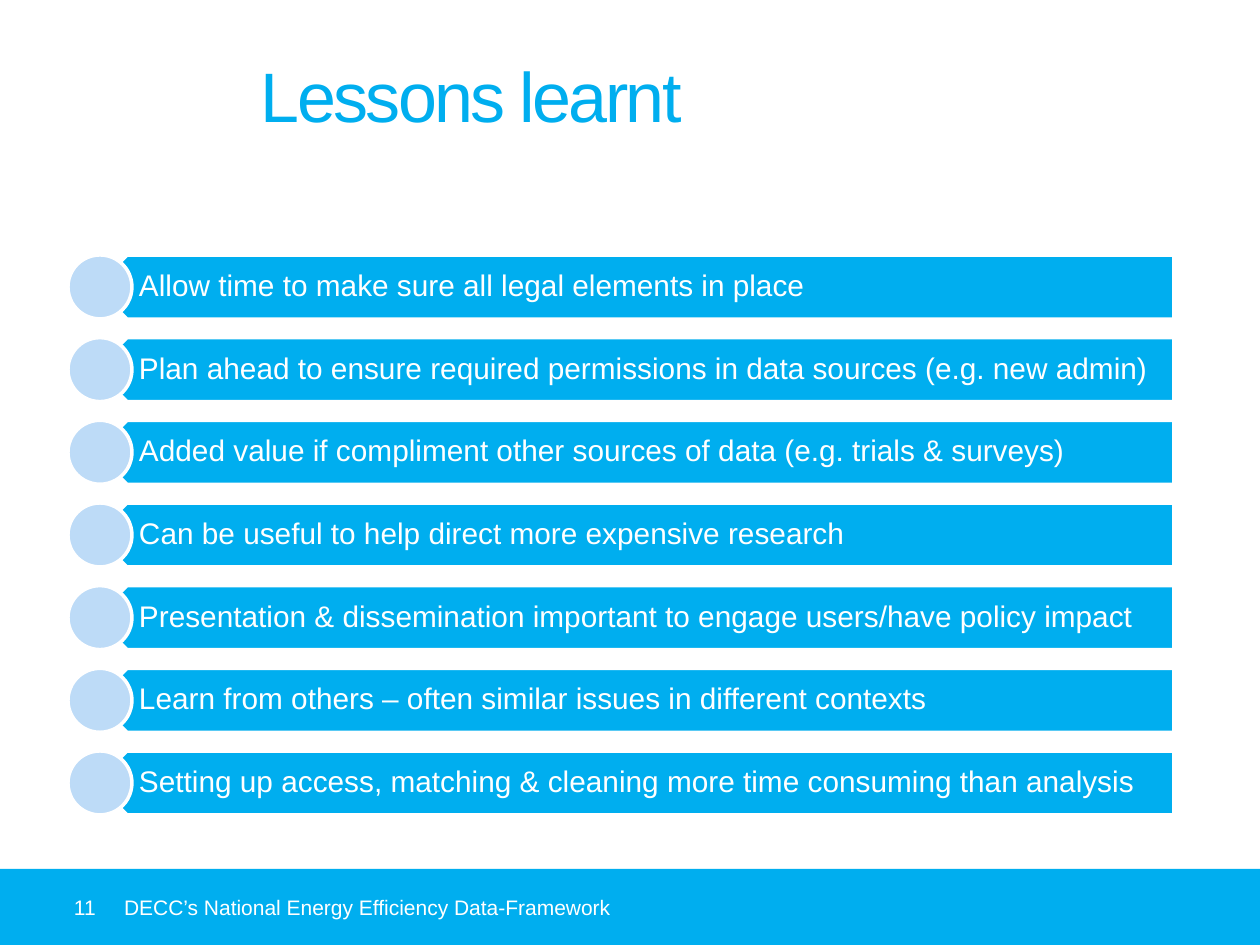
"""Build the "Lessons learnt" slide: seven bars with round markers above a footer band."""
from pptx import Presentation
from pptx.dml.color import RGBColor
from pptx.enum.shapes import MSO_SHAPE
from pptx.enum.text import MSO_ANCHOR, MSO_AUTO_SIZE, PP_ALIGN
from pptx.util import Pt

RECTANGLE, PENTAGON, OVAL = MSO_SHAPE.RECTANGLE, MSO_SHAPE.PENTAGON, MSO_SHAPE.OVAL
MIDDLE, BOTTOM = MSO_ANCHOR.MIDDLE, MSO_ANCHOR.BOTTOM
LEFT = PP_ALIGN.LEFT
NO_FIT = MSO_AUTO_SIZE.NONE

TITLE = "Lessons learnt"
LESSONS = [
    "Allow time to make sure all legal elements in place",
    "Plan ahead to ensure required permissions in data sources (e.g. new admin)",
    "Added value if compliment other sources of data (e.g. trials & surveys)",
    "Can be useful to help direct more expensive research",
    "Presentation & dissemination important to engage users/have policy impact",
    "Learn from others – often similar issues in different contexts",
    "Setting up access, matching & cleaning more time consuming than analysis",
]
PAGE_NUMBER = "11"
FOOTER = "DECC’s National Energy Efficiency Data-Framework"

COLOURS = {"blue": "00AEEF", "pale": "BDDBF7", "white": "FFFFFF"}
FONT = "Arial"
EMU_PER_PX = 914400 / 126
FIRST_TOP, LAST_TOP, BAR_HEIGHT = 255, 751, 64
BAR_LEFT, BAR_WIDTH = 95, 1079
TEXT_LEFT, TEXT_WIDTH = 111, 1063
MARKER_LEFT = 68


def px(length):
    return round(length * EMU_PER_PX)


def colour(name):
    return RGBColor.from_string(COLOURS[name])


def place(area):
    return [px(length) for length in area]


def add_shape(page, kind, area, fill, outlined=True):
    shape = page.shapes.add_shape(kind, *place(area))
    shape.shadow.inherit = False
    shape.fill.solid()
    shape.fill.fore_color.rgb = colour(fill)
    if outlined:
        shape.line.color.rgb = colour("white")
        shape.line.width = Pt(2)
    else:
        shape.line.fill.background()
    return shape


def write(box, text, size, ink="white", insets=(0, 0, 0, 0), anchor=MIDDLE, spacing=1.0):
    frame = box.text_frame
    sides = ("margin_left", "margin_top", "margin_right", "margin_bottom")
    frame_format = dict(zip(sides, place(insets)), word_wrap=True,
                        auto_size=NO_FIT, vertical_anchor=anchor)
    for name, value in frame_format.items():
        setattr(frame, name, value)
    para = frame.paragraphs[0]
    para.alignment = LEFT
    para.line_spacing = spacing
    span = para.add_run()
    span.text = text
    for name, value in {"name": FONT, "size": Pt(size), "bold": False}.items():
        setattr(span.font, name, value)
    span.font.color.rgb = colour(ink)
    return span


def add_lesson(page, text, top):
    bar = add_shape(page, PENTAGON, (BAR_LEFT, top, BAR_WIDTH, BAR_HEIGHT), "blue")
    bar.rotation = 180
    label = page.shapes.add_textbox(*place((TEXT_LEFT, top, TEXT_WIDTH, BAR_HEIGHT)))
    write(label, text, 17, insets=(28, 9, 16, 9), spacing=0.9)
    add_shape(page, OVAL, (MARKER_LEFT, top, BAR_HEIGHT, BAR_HEIGHT), "pale")


def main():
    deck = Presentation()
    deck.slide_width, deck.slide_height = px(1260), px(945)
    page = deck.slides.add_slide(deck.slide_layouts[5])

    title = page.shapes.title
    title.left, title.top, title.width, title.height = place((261, 48, 942, 89))
    heading = write(title, TITLE, 40, ink="blue", anchor=BOTTOM)
    heading.font._element.set("spc", "-150")

    band = add_shape(page, RECTANGLE, (0, 869, 1260, 76), "blue", outlined=False)
    write(band, PAGE_NUMBER, 12, insets=(74, 0, 13, 0))
    footer = page.shapes.add_textbox(*place((124, 869, 1062, 76)))
    write(footer, FOOTER, 12)

    pitch = (LAST_TOP - FIRST_TOP) / (len(LESSONS) - 1)
    for row, lesson in enumerate(LESSONS):
        add_lesson(page, lesson, FIRST_TOP + row * pitch)

    deck.save("out.pptx")


if __name__ == "__main__":
    main()
